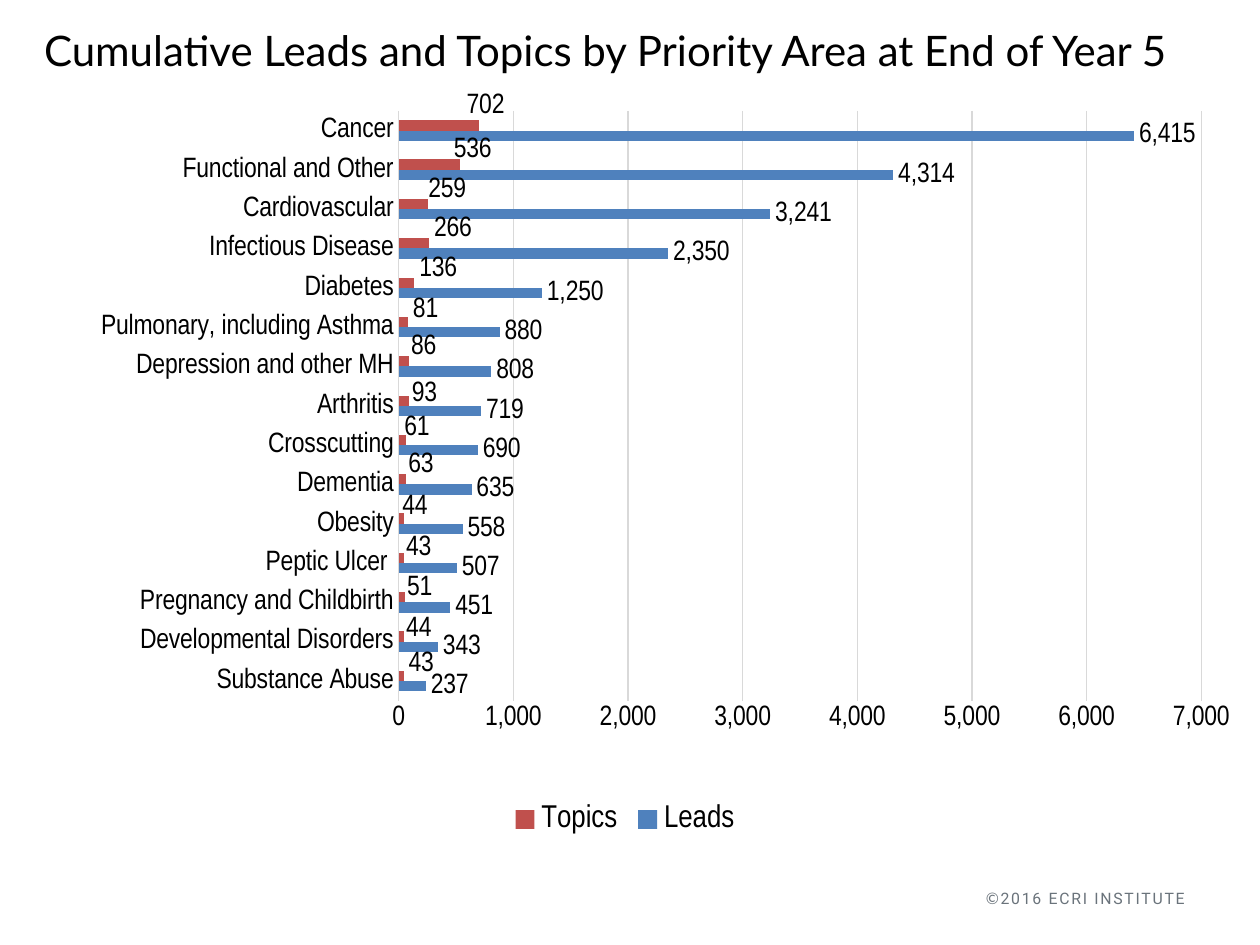
from lxml import etree
from pptx import Presentation
from pptx.chart.data import CategoryChartData
from pptx.dml.color import RGBColor
from pptx.enum.chart import XL_CHART_TYPE as CT, XL_LABEL_POSITION as LP
from pptx.enum.chart import XL_LEGEND_POSITION as LEG, XL_TICK_MARK as TM
from pptx.enum.text import MSO_ANCHOR as MA, PP_ALIGN as PA
from pptx.oxml.ns import qn
from pptx.util import Cm, Pt


def style(font, color="000000", **values):
    """Set font attributes from values, then the colour."""
    for name, value in values.items():
        setattr(font, name, value)
    font.color.rgb = RGBColor.from_string(color)


def make_layout(**values):
    """Return a c:layout element with a manual layout of the given values."""
    layout = etree.Element(qn("c:layout"))
    manual = etree.SubElement(layout, qn("c:manualLayout"))
    for name, value in values.items():
        etree.SubElement(manual, qn(f"c:{name}")).set("val", str(value))
    return layout


# Priority area, leads, topics, and the shift of the topics label
# as fractions of the chart's width and height
AREAS = [
    ("Substance Abuse", 237, 43, 0, -0.016),
    ("Developmental Disorders", 343, 44, -0.002, -0.01),
    ("Pregnancy and Childbirth", 451, 51, -0.002, -0.012),
    ("Peptic Ulcer ", 507, 43, -0.002, -0.013),
    ("Obesity", 558, 44, -0.005, -0.015),
    ("Dementia", 635, 63, -0.002, -0.019),
    ("Crosscutting", 690, 61, -0.005, -0.016),
    ("Arthritis", 719, 93, -0.002, -0.008),
    ("Depression and other MH", 808, 86, -0.002, -0.019),
    ("Pulmonary, including Asthma", 880, 81, 0, -0.016),
    ("Diabetes", 1250, 136, 0, -0.018),
    ("Infectious Disease", 2350, 266, 0, -0.019),
    ("Cardiovascular", 3241, 259, -0.004, -0.019),
    ("Functional and Other", 4314, 536, -0.009, -0.019),
    ("Cancer", 6415, 702, -0.014, -0.025),
]
GRID = RGBColor.from_string("D9D9D9")
LABEL = {"name": "Arial Narrow", "size": Pt(16), "bold": False}

prs = Presentation()
prs.slide_width, prs.slide_height = Cm(25.4), Cm(19.05)
s = prs.slides.add_slide(prs.slide_layouts[6])

# Title and copyright line
TEXTS = [
    ((0.64, 0.36, 23.93, 1.27), PA.LEFT, "000000", 24, 0,
     [("Cumulative Leads and Topics by Priority Area at End of Year 5", "Lato")]),
    ((17.98, 17.78, 6.15, 0.64), PA.RIGHT, "6A737B", 9, 100,
     [("©", "Lato"), ("2016 ECRI INSTITUTE", "Roboto")]),
]
for box, align, color, size, spacing, runs in TEXTS:
    tf = s.shapes.add_textbox(*map(Cm, box)).text_frame
    frame = {"word_wrap": True, "vertical_anchor": MA.MIDDLE,
             "margin_top": 0, "margin_bottom": 0}
    for name, value in frame.items():
        setattr(tf, name, value)
    p = tf.paragraphs[0]
    p.alignment = align
    for text, font_name in runs:
        r = p.add_run()
        r.text = text
        style(r.font, color, name=font_name, size=Pt(size))
        if spacing:
            r.font._element.set("spc", str(spacing))

# Chart
names, leads, topics, shift_x, shift_y = zip(*AREAS)
data = CategoryChartData(number_format="#,##0")
data.categories = names
data.add_series("Leads", leads)
data.add_series("Topics", topics)
chart = s.shapes.add_chart(
    CT.BAR_CLUSTERED, Cm(0), Cm(1.9), Cm(25.2), Cm(15.04), data).chart
style(chart.font, name="Calibri", size=Pt(10))
chart.has_title = False
chart.has_legend = True
chart.legend.position = LEG.BOTTOM
chart.legend.include_in_layout = False
style(chart.legend.font, name="Arial Narrow", size=Pt(18))

area = chart._chartSpace.chart.plotArea
for old in area.findall(qn("c:layout")):
    area.remove(old)
area.insert(0, make_layout(layoutTarget="inner", xMode="edge", yMode="edge",
                           x=0.319, y=0.022, w=0.642, h=0.791))

for axis in (chart.category_axis, chart.value_axis):
    axis.major_tick_mark = axis.minor_tick_mark = TM.NONE
    style(axis.tick_labels.font, **LABEL)
cat_line = chart.category_axis.format.line
cat_line.color.rgb, cat_line.width = GRID, Pt(0.75)
val = chart.value_axis
val.minimum_scale, val.maximum_scale, val.major_unit = 0, 7000, 1000
val.tick_labels.number_format = "#,##0"
val.tick_labels.number_format_is_linked = False
val.format.line.fill.background()
val.has_major_gridlines = True
grid_line = val.major_gridlines.format.line
grid_line.color.rgb, grid_line.width = GRID, Pt(0.75)

plot = chart.plots[0]
plot.gap_width, plot.overlap, plot.vary_by_categories = 182, 0, False
for series, color in zip(plot.series, ("4F81BD", "C0504D")):
    series.format.fill.solid()
    series.format.fill.fore_color.rgb = RGBColor.from_string(color)
    series.invert_if_negative = False
    labels = series.data_labels
    values = {"show_value": True, "position": LP.OUTSIDE_END,
              "number_format": "#,##0", "number_format_is_linked": False}
    for name, value in values.items():
        setattr(labels, name, value)
    style(labels.font, **LABEL)

# Topics labels are moved clear of the leads bars
topic_series = plot.series[1]
for i in range(len(AREAS)):
    label = topic_series.points[i].data_label
    style(label.font, **LABEL)
    label.position = LP.OUTSIDE_END
for idx, x, y in zip(topic_series._element.xpath("c:dLbls/c:dLbl/c:idx"),
                     shift_x, shift_y):
    idx.addnext(make_layout(x=x, y=y))

prs.save("out.pptx")
